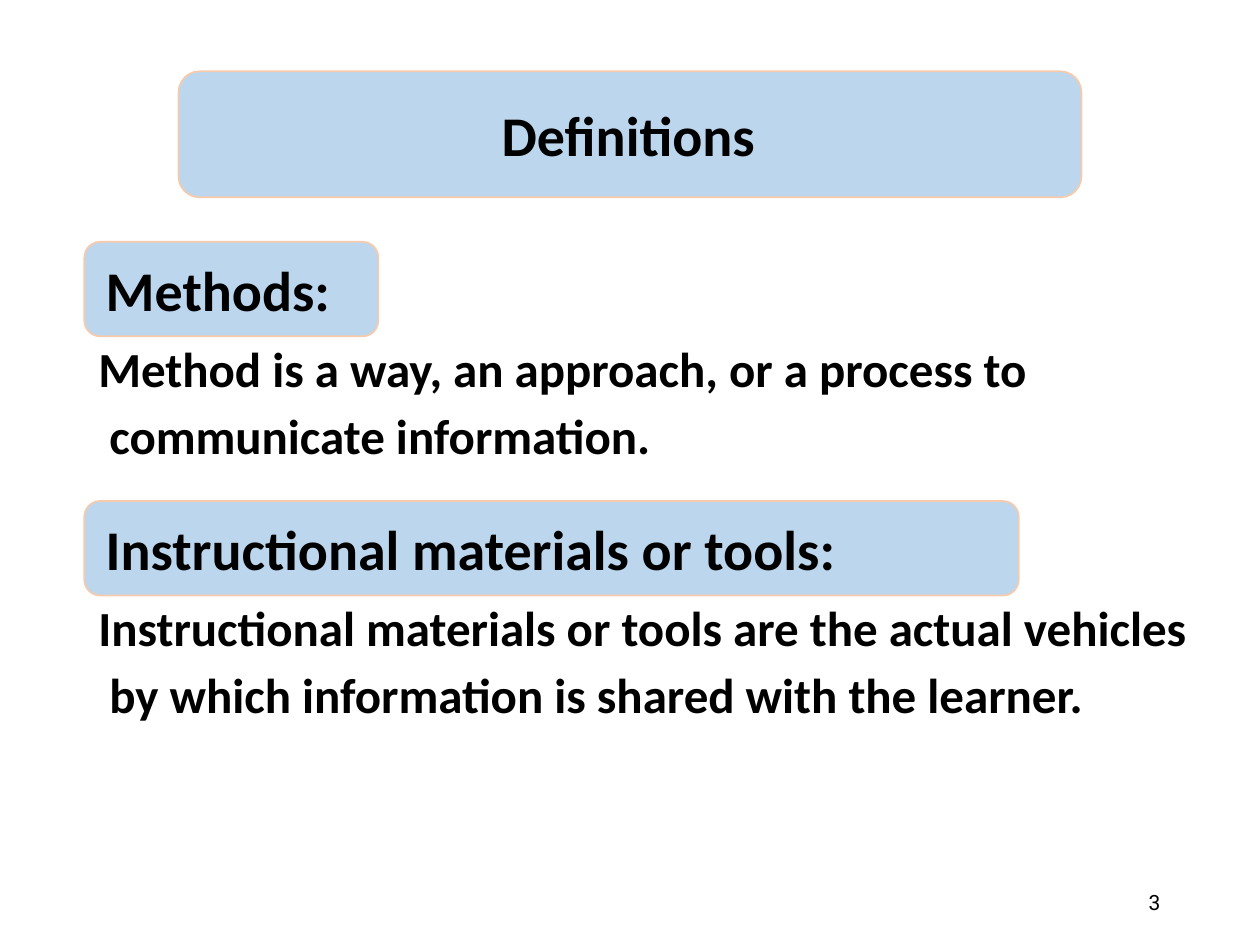
from pptx import Presentation
from pptx.dml.color import RGBColor
from pptx.enum.shapes import MSO_SHAPE
from pptx.enum.text import MSO_ANCHOR, MSO_AUTO_SIZE, PP_ALIGN
from pptx.util import Pt

PALE_BLUE = RGBColor(0xBC, 0xD6, 0xED)
PEACH = RGBColor(0xF8, 0xCA, 0xAC)
BLACK = RGBColor(0, 0, 0)

# Heading, definition, panel top and panel width
SECTIONS = [
    ("Methods:",
     "Method is a way, an approach, or a process to communicate information.",
     138.2, 168),
    ("Instructional materials or tools:",
     "Instructional materials or tools are the actual vehicles "
     "by which information is shared with the learner.",
     286.3, 534),
]


def set_text(shape, text, *, size, font="Calibri", bold=True, left_inset=0,
             anchor=MSO_ANCHOR.MIDDLE, wrap=True, line_spacing=None, hanging=0):
    frame = shape.text_frame
    frame.auto_size = MSO_AUTO_SIZE.NONE
    frame.word_wrap = wrap
    frame.vertical_anchor = anchor
    frame.margin_left = Pt(left_inset)
    frame.margin_top = frame.margin_right = frame.margin_bottom = 0
    frame.text = text
    paragraph = frame.paragraphs[0]
    paragraph.alignment = PP_ALIGN.LEFT
    if line_spacing:
        paragraph.line_spacing = line_spacing
    if hanging:
        properties = paragraph._p.get_or_add_pPr()
        properties.set("marL", str(Pt(hanging)))
        properties.set("indent", str(-Pt(hanging)))
    paragraph.font.name = font
    paragraph.font.size = Pt(size)
    paragraph.font.bold = bold
    paragraph.font.color.rgb = BLACK


def add_panel(slide, left, top, width, height):
    panel = slide.shapes.add_shape(MSO_SHAPE.ROUNDED_RECTANGLE,
                                   Pt(left), Pt(top), Pt(width), Pt(height))
    panel.shadow.inherit = False
    panel.fill.solid()
    panel.fill.fore_color.rgb = PALE_BLUE
    panel.line.color.rgb = PEACH
    panel.line.width = Pt(0.96)
    return panel


def add_title(slide, left, top, width, height):
    panel = add_panel(slide, left, top, width, height)
    title = slide.shapes.title
    title.left, title.top = Pt(left + 184.6), Pt(top + 15.5)
    title.width, title.height = Pt(147.6), Pt(40.3)
    set_text(title, "Definitions", size=32, wrap=False)
    # Bring the title in front of its panel
    panel._element.addnext(title._element)


def add_section(slide, heading, definition, left, top, panel_width, text_width):
    panel = add_panel(slide, left, top, panel_width, 54)
    set_text(panel, heading, size=32, left_inset=9.6)
    box = slide.shapes.add_textbox(Pt(left + 8), Pt(top + 50),
                                   Pt(text_width), Pt(80))
    set_text(box, definition, size=28, anchor=MSO_ANCHOR.TOP,
             line_spacing=1.15, hanging=6.3)


def add_page_number(slide, left, top, width, height):
    box = slide.shapes.add_textbox(Pt(left), Pt(top), Pt(width), Pt(height))
    set_text(box, "3", size=12, font="Roboto", bold=False, left_inset=4)


def main():
    presentation = Presentation()
    presentation.slide_width, presentation.slide_height = Pt(720), Pt(540)
    slide = presentation.slides.add_slide(presentation.slide_layouts[5])

    add_title(slide, 102, 40.8, 516, 72)
    for heading, definition, top, panel_width in SECTIONS:
        add_section(slide, heading, definition, 48.2, top, panel_width, 628)
    add_page_number(slide, 652.3, 506.2, 13.7, 18)

    presentation.save("out.pptx")


if __name__ == "__main__":
    main()
